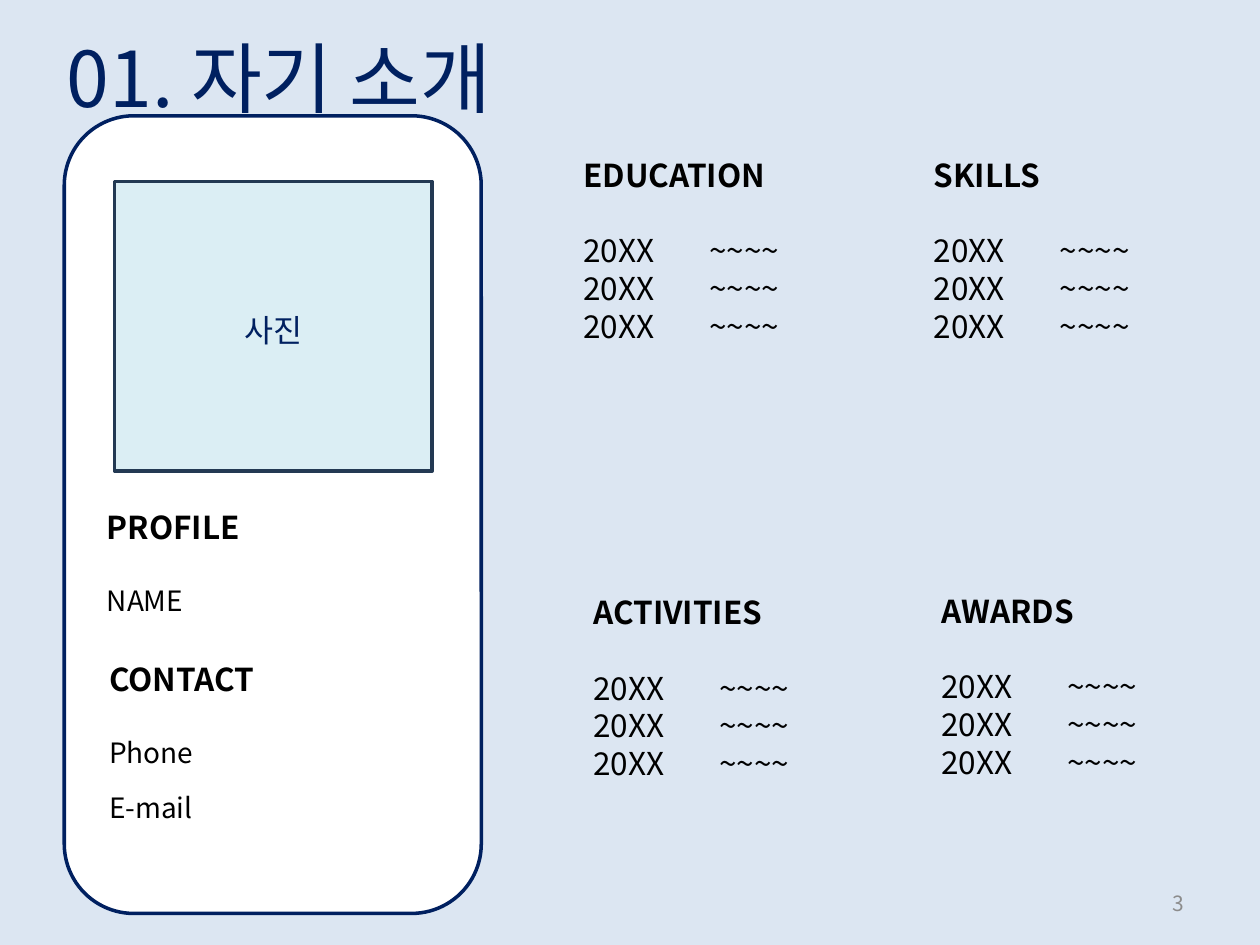
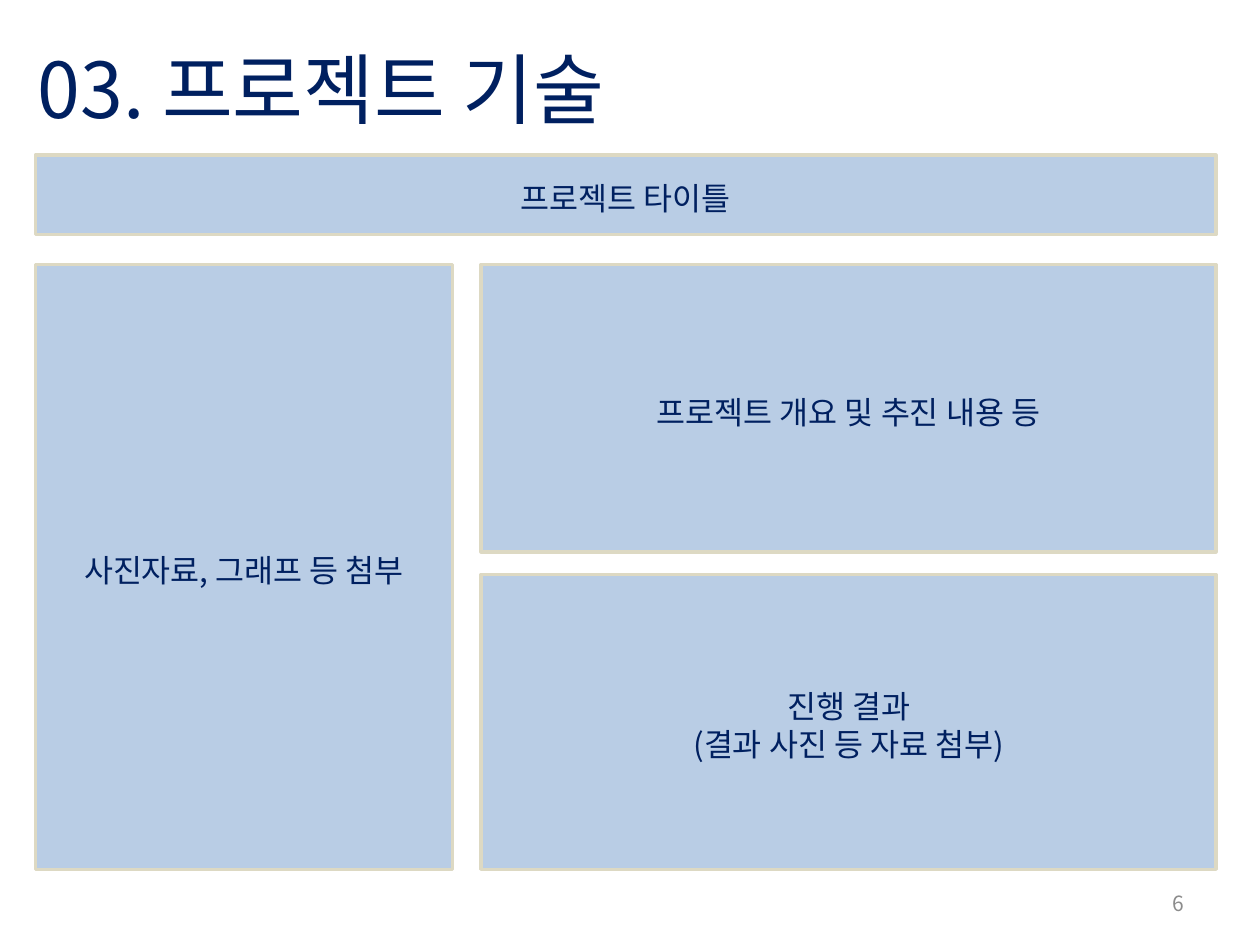
"""Build the self-introduction and project slides of a portfolio."""
from dataclasses import dataclass
from typing import NamedTuple

import pptx
import pptx.dml.color
import pptx.enum.shapes
import pptx.enum.text
import pptx.oxml
import pptx.oxml.ns
import pptx.util
from lxml import etree

Pt = pptx.util.Pt
ALIGN = pptx.enum.text.PP_ALIGN
ANCHOR = pptx.enum.text.MSO_ANCHOR
SHAPE = pptx.enum.shapes.MSO_SHAPE
qn = pptx.oxml.ns.qn


@dataclass(frozen=True)
class Theme:
    font: str = "Noto Sans CJK KR"
    navy: str = "002060"
    black: str = "000000"
    gray: str = "8C8C8C"
    white: str = "FFFFFF"
    pale: str = "DCE6F2"
    photo: str = "DBEEF4"
    photo_line: str = "233953"
    panel: str = "B9CDE5"
    panel_line: str = "DDD9C3"
    title: float = 44
    body: float = 18
    detail: float = 16
    number: float = 12
    leading: float = 1.2
    drop: float = 0.1
    inset: float = 3.6
    tab: float = 57.6
    line: float = 2


T = Theme()


class Box(NamedTuple):
    left: float
    top: float
    width: float
    height: float


class Line(NamedTuple):
    text: str
    size: float = T.body
    bold: bool = False
    before: float = 0


@dataclass(frozen=True)
class Block:
    box: Box
    lines: list[Line]


@dataclass(frozen=True)
class Panel:
    box: Box
    lines: list[str]
    fill: str = T.panel
    line: str = T.panel_line
    kind: SHAPE = SHAPE.RECTANGLE


def rgb(value: str) -> pptx.dml.color.RGBColor:
    return pptx.dml.color.RGBColor.from_string(value)


def place(sp, box: Box) -> None:
    sp.left, sp.top, sp.width, sp.height = map(Pt, box)


def add_text(p, text: str, *, size: float = T.body, bold: bool = False,
             color: str = T.black, align=ALIGN.LEFT, before: float = 0) -> None:
    p.alignment = align
    p.line_spacing = Pt(size * T.leading)
    p.space_before, p.space_after = Pt(before), Pt(0)
    pPr = p._p.get_or_add_pPr()
    pPr.set("marL", "0")
    pPr.set("indent", "0")
    etree.SubElement(pPr, qn("a:buNone"))
    if "\t" in text:
        tabs = etree.SubElement(pPr, qn("a:tabLst"))
        etree.SubElement(tabs, qn("a:tab"), pos=str(Pt(T.tab)), algn="l")
    r = p.add_run()
    r.text = text
    r.font.size, r.font.bold, r.font.name = Pt(size), bold, T.font
    r.font.color.rgb = rgb(color)
    etree.SubElement(r._r.get_or_add_rPr(), qn("a:ea"), typeface=T.font)


def fill_text(sp, lines: list[Line], *, color: str = T.black,
              align=ALIGN.LEFT, anchor=ANCHOR.TOP) -> None:
    tf = sp.text_frame
    tf.word_wrap = True
    tf.auto_size = pptx.enum.text.MSO_AUTO_SIZE.NONE
    tf.vertical_anchor = anchor
    shift = T.drop * lines[0].size * (2 if anchor == ANCHOR.MIDDLE else 1)
    tf.margin_top, tf.margin_bottom = Pt(T.inset + shift), Pt(T.inset)
    tf.margin_left = tf.margin_right = Pt(2 * T.inset)
    for i, line in enumerate(lines):
        p = tf.add_paragraph() if i else tf.paragraphs[0]
        add_text(p, line.text, size=line.size, bold=line.bold,
                 before=line.before, color=color, align=align)


def add_panel(s, panel: Panel) -> None:
    sp = s.shapes.add_shape(panel.kind, *map(Pt, panel.box))
    sp.shadow.inherit = False
    sp.fill.solid()
    sp.fill.fore_color.rgb = rgb(panel.fill)
    sp.line.color.rgb = rgb(panel.line)
    sp.line.width = Pt(T.line)
    if panel.lines:
        fill_text(sp, [Line(text) for text in panel.lines], color=T.navy,
                  align=ALIGN.CENTER, anchor=ANCHOR.MIDDLE)


def add_slide(prs, layout: int, title: str, box: Box, number: int, background: str):
    s = prs.slides.add_slide(prs.slide_layouts[layout])
    s.background.fill.solid()
    s.background.fill.fore_color.rgb = rgb(background)
    place(s.shapes.title, box)
    fill_text(s.shapes.title, [Line(title, T.title)], color=T.navy)
    sp = s.shapes.add_textbox(*map(Pt, (516.2, 500.4, 167.8, 28.8)))
    fill_text(sp, [Line(str(number), T.number)], color=T.gray,
              align=ALIGN.RIGHT, anchor=ANCHOR.MIDDLE)
    return s


def heading(text: str) -> Line:
    return Line(text, bold=True)


def build_introduction(prs) -> None:
    s = add_slide(prs, 4, "01. 자기 소개", Box(31, 9.4, 357.1, 60.5), 3, T.pale)
    gap = T.body * T.leading
    add_panel(s, Panel(Box(36.7, 66.2, 238.3, 455.8), [], T.white, T.navy,
                       SHAPE.ROUNDED_RECTANGLE))
    add_panel(s, Panel(Box(65.5, 103.7, 181.4, 165.6), ["사진"],
                       T.photo, T.photo_line))
    for block in (
        Block(Box(54, 285.1, 108, 66.2),
              [heading("PROFILE"), Line("NAME", T.detail, before=gap)]),
        Block(Box(55.4, 371.5, 180, 110.9),
              [heading("CONTACT"), Line("Phone", T.detail, before=gap),
               Line("E-mail", T.detail, before=12.6)]),
    ):
        fill_text(s.shapes.add_textbox(*map(Pt, block.box)), block.lines)

    entry = "\t".join(("20XX", "~~~~"))
    entries = [Line(entry, before=gap), Line(entry), Line(entry)]
    sections = (
        ("EDUCATION", 326.2, 83.5),
        ("SKILLS", 526.3, 83.5),
        ("ACTIVITIES", 331.9, 333.4),
        ("AWARDS", 530.6, 332.6),
    )
    for idx, (name, left, top) in enumerate(sections, start=1):
        sp = s.placeholders[idx]
        place(sp, Box(left, top, 158.4, 116.6))
        fill_text(sp, [heading(name), *entries])


def build_project(prs) -> None:
    s = add_slide(prs, 5, "03. 프로젝트 기술", Box(14.4, 15.8, 566.6, 60.5), 6, T.white)
    left, middle, right = 20.2, 275, 694.8
    top, bottom = 151.2, 496.8
    for panel in (
        Panel(Box(left, top, 238.3, bottom - top), ["사진자료, 그래프 등 첨부"]),
        Panel(Box(left, 88.6, right - left, 45.4), ["프로젝트 타이틀"]),
        Panel(Box(middle, top, right - middle, 164.2),
              ["프로젝트 개요 및 추진 내용 등"]),
        Panel(Box(middle, 328.3, right - middle, bottom - 328.3),
              ["진행 결과", "(결과 사진 등 자료 첨부)"]),
    ):
        add_panel(s, panel)


def main() -> None:
    prs = pptx.Presentation()
    prs.slide_width, prs.slide_height = Pt(720), Pt(540)
    build_introduction(prs)
    build_project(prs)
    prs.save("out.pptx")


if __name__ == "__main__":
    main()
